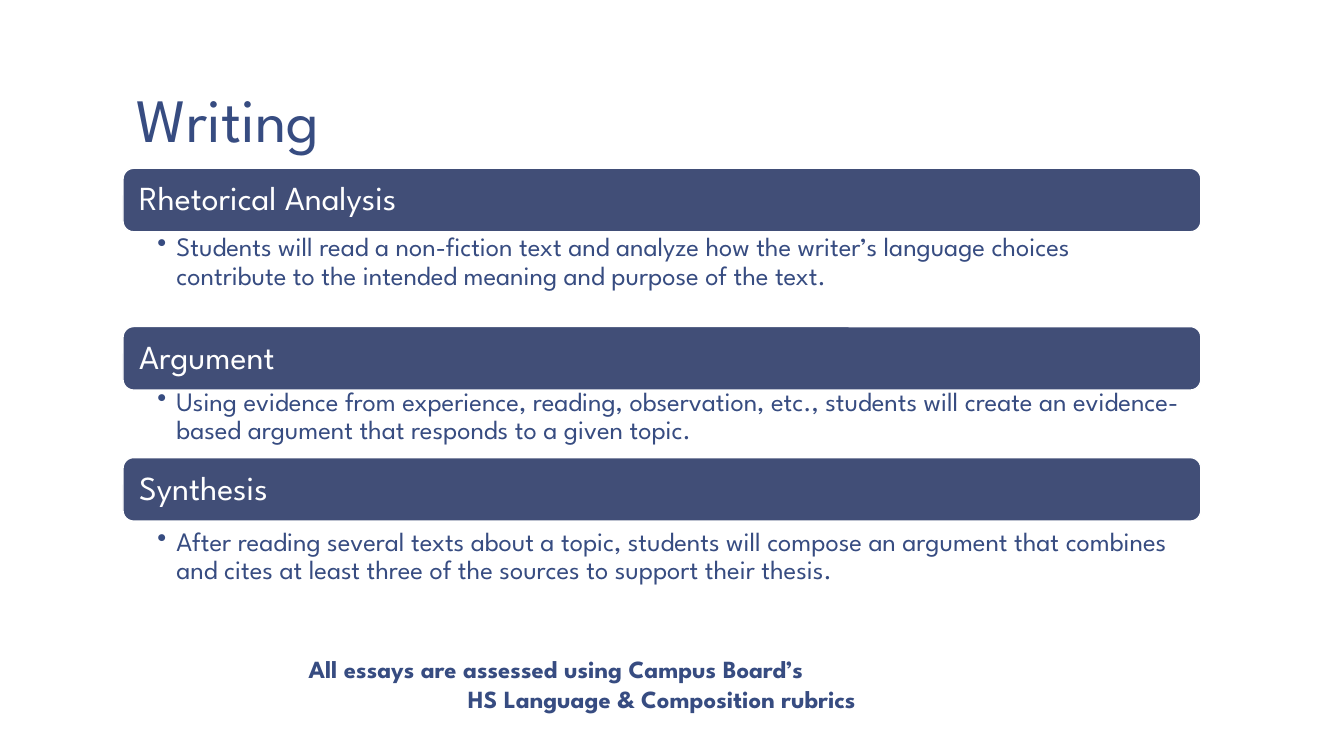
"""Build the Writing slide: three essay types and a note on rubrics."""
from lxml.etree import SubElement
from pptx import Presentation
from pptx.dml.color import RGBColor
from pptx.enum.shapes import MSO_SHAPE
from pptx.enum.text import MSO_ANCHOR, PP_ALIGN
from pptx.oxml.ns import qn
from pptx.util import Inches, Pt

TITLE = "Writing"
ESSAYS = [
    ("Rhetorical Analysis", 1.67, 2.29, 0.77,
     "Students will read a non-fiction text and analyze how the writer’s language choices "
     "contribute to the intended meaning and purpose of the text."),
    ("Argument", 3.24, 3.82, 0.85,
     "Using evidence from experience, reading, observation, etc., students will create an "
     "evidence-based argument that responds to a given topic."),
    ("Synthesis", 4.54, 5.21, 0.65,
     "After reading several texts about a topic, students will compose an argument that "
     "combines and cites at least three of the sources to support their thesis."),
]
NOTE = [
    ("All essays are assessed using Campus Board’s", PP_ALIGN.LEFT, 1.71),
    ("HS Language & Composition rubrics", PP_ALIGN.CENTER, 0),
]
COLORS = {"bar": "414E77", "text": "374C81", "white": "FFFFFF"}
FONT = "League Spartan"
LEFT, WIDTH, BAR = 1.22, 10.69, 0.63


def color(name):
    return RGBColor.from_string(COLORS[name])


def frame(shape, insets, anchor=MSO_ANCHOR.TOP):
    box = shape.text_frame
    box.word_wrap = True
    box.vertical_anchor = anchor
    box.margin_left, box.margin_top, box.margin_right, box.margin_bottom = map(Inches, insets)
    return box


def write(para, text, size, tint="text", bold=False, space=None, align=PP_ALIGN.LEFT):
    para.alignment = align
    para.line_spacing = space
    run = para.add_run()
    run.text = text
    run.font.name = FONT
    run.font.size = Pt(size)
    run.font.bold = bold
    run.font.color.rgb = color(tint)


def indent(para, left, hang=0):
    props = para._p.get_or_add_pPr()
    props.set("marL", str(Inches(left)))
    props.set("indent", str(-Inches(hang)))
    return props


def add_bar(slide, text, top):
    bar = slide.shapes.add_shape(MSO_SHAPE.ROUNDED_RECTANGLE, Inches(LEFT), Inches(top),
                                 Inches(WIDTH), Inches(BAR))
    bar.shadow.inherit = False
    bar.fill.solid()
    bar.fill.fore_color.rgb = color("bar")
    bar.line.color.rgb = color("white")
    bar.line.width = Pt(1)
    box = frame(bar, (0.13, 0.1, 0.13, 0.1), MSO_ANCHOR.MIDDLE)
    write(box.paragraphs[0], text, 24, "white", space=0.9)


def add_box(slide, top, height, insets):
    shape = slide.shapes.add_textbox(Inches(LEFT), Inches(top), Inches(WIDTH), Inches(height))
    return frame(shape, insets)


def main():
    deck = Presentation()
    deck.slide_width, deck.slide_height = Inches(13.33), Inches(7.5)
    slide = deck.slides.add_slide(deck.slide_layouts[5])

    title = slide.shapes.title
    title.left, title.top = Inches(LEFT), Inches(0.08)
    title.width, title.height = Inches(11.11), Inches(1.53)
    box = frame(title, (0.13, 0.07, 0.13, 0.07), MSO_ANCHOR.BOTTOM)
    write(box.paragraphs[0], TITLE, 44, space=0.85)

    for name, top, low, height, text in ESSAYS:
        add_bar(slide, name, top)
        para = add_box(slide, low, height, (0.34, 0.03, 0.19, 0.03)).paragraphs[0]
        SubElement(indent(para, 0.19, 0.19), qn("a:buChar")).set("char", "•")
        write(para, text, 19, space=0.9)

    box = add_box(slide, 6.42, 0.75, (0.13, 0.07, 0.13, 0.07))
    for i, (text, align, left) in enumerate(NOTE):
        para = box.add_paragraph() if i else box.paragraphs[0]
        indent(para, left)
        write(para, text, 17.6, bold=True, align=align)

    deck.save("out.pptx")


if __name__ == "__main__":
    main()
